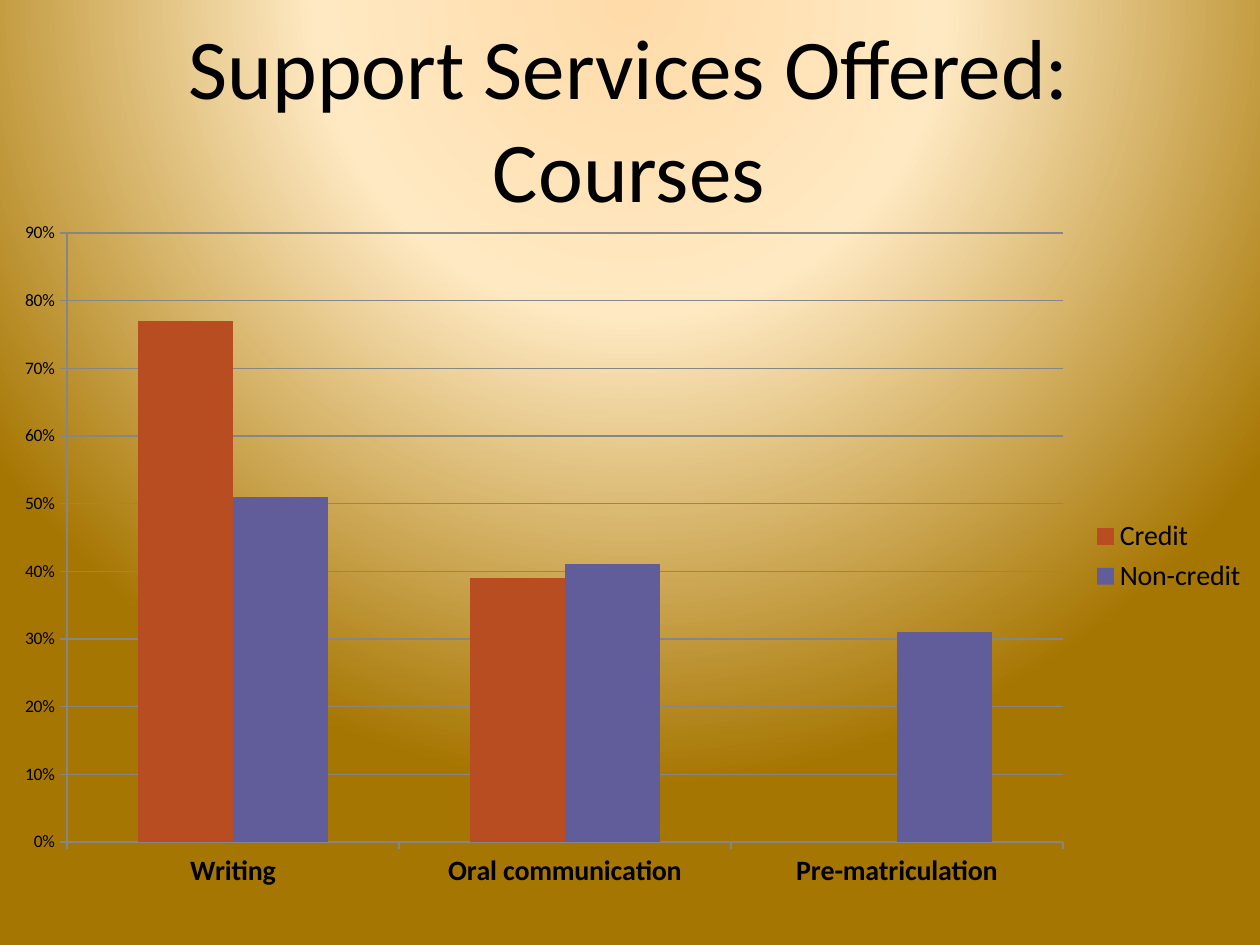
from dataclasses import dataclass
from typing import Optional

from lxml.etree import SubElement
from pptx import Presentation
from pptx.chart.chart import Chart
from pptx.chart.data import CategoryChartData
from pptx.dml.color import RGBColor
from pptx.enum.chart import XL_CHART_TYPE, XL_LEGEND_POSITION, XL_TICK_MARK
from pptx.enum.text import MSO_ANCHOR, MSO_AUTO_SIZE, PP_ALIGN
from pptx.oxml import parse_xml
from pptx.oxml.ns import nsdecls, qn
from pptx.slide import Slide
from pptx.text.text import Font, TextFrame
from pptx.util import Emu, Pt

EMU_PER_PX = 914400 / 126


@dataclass(frozen=True)
class Theme:
    font: str = "Calibri"
    ink: str = "000000"
    grid: str = "868686"
    glow: tuple = ((0, "FFDBA9"), (40, "FFE9C2"), (100, "A67602"))
    title_size: float = 48.6
    label_size: int = 16
    scale_size: int = 10


@dataclass(frozen=True)
class Box:
    left: int
    top: int
    width: int
    height: int

    def emu(self) -> tuple:
        return tuple(px(side) for side in (self.left, self.top, self.width, self.height))


@dataclass(frozen=True)
class CourseType:
    name: str
    shares: tuple[Optional[float], ...]
    color: str


THEME = Theme()
TITLE_BOX = Box(78, 38, 1102, 158)
CHART_BOX = Box(0, 210, 1260, 693)
PLOT_BOX = Box(67, 233, 996, 609)
COURSES = ("Writing", "Oral communication", "Pre-matriculation")
COURSE_TYPES = (
    CourseType("Credit", (0.77, 0.39, None), "B74D21"),
    CourseType("Non-credit", (0.51, 0.41, 0.31), "615D9A"),
)


def px(length: int) -> Emu:
    return Emu(round(length * EMU_PER_PX))


def format_font(font: Font, size: float, bold: bool = False) -> None:
    font.name = THEME.font
    font.size = Pt(size)
    font.bold = bold
    font.color.rgb = RGBColor.from_string(THEME.ink)


def write_text(frame: TextFrame, text: str, *, size: float, bold: bool = False,
               align: PP_ALIGN = PP_ALIGN.CENTER,
               anchor: MSO_ANCHOR = MSO_ANCHOR.MIDDLE) -> None:
    frame.word_wrap = True
    frame.auto_size = MSO_AUTO_SIZE.NONE
    frame.vertical_anchor = anchor
    paragraph = frame.paragraphs[0]
    paragraph.alignment = align
    run = paragraph.add_run()
    run.text = text
    format_font(run.font, size, bold)


def paint_background(slide: Slide) -> None:
    """Radial glow centred above the top edge."""
    slide.background.fill.gradient()
    gradient = slide.element.find(".//" + qn("a:gradFill"))
    stops = "".join(
        f'<a:gs pos="{percent * 1000}"><a:srgbClr val="{color}"/></a:gs>'
        for percent, color in THEME.glow)
    glow = parse_xml(
        f'<a:gradFill {nsdecls("a")} rotWithShape="1"><a:gsLst>{stops}</a:gsLst>'
        '<a:path path="circle"><a:fillToRect l="50000" t="-80000" r="50000" b="180000"/>'
        '</a:path></a:gradFill>')
    gradient.getparent().replace(gradient, glow)


def place_plot(chart: Chart) -> None:
    """Fix the inner plot area as fractions of the chart frame."""
    plot_area = chart.element.find(".//" + qn("c:plotArea"))
    layout = plot_area.find(qn("c:layout"))
    if layout is None:
        layout = SubElement(plot_area, qn("c:layout"))
        plot_area.insert(0, layout)
    manual = SubElement(layout, qn("c:manualLayout"))
    settings = {
        "layoutTarget": "inner", "xMode": "edge", "yMode": "edge",
        "x": (PLOT_BOX.left - CHART_BOX.left) / CHART_BOX.width,
        "y": (PLOT_BOX.top - CHART_BOX.top) / CHART_BOX.height,
        "w": PLOT_BOX.width / CHART_BOX.width,
        "h": PLOT_BOX.height / CHART_BOX.height,
    }
    for tag, value in settings.items():
        SubElement(manual, qn(f"c:{tag}")).set("val", str(value))


def add_course_chart(slide: Slide) -> None:
    shares = CategoryChartData(number_format="0%")
    shares.categories = COURSES
    for course_type in COURSE_TYPES:
        shares.add_series(course_type.name, course_type.shares)
    chart = slide.shapes.add_chart(
        XL_CHART_TYPE.COLUMN_CLUSTERED, *CHART_BOX.emu(), shares).chart
    format_font(chart.font, THEME.scale_size)
    chart.has_title = False
    place_plot(chart)

    # Columns
    columns = chart.plots[0]
    columns.gap_width = 150
    columns.overlap = 0
    columns.vary_by_categories = False
    for series, course_type in zip(columns.series, COURSE_TYPES):
        series.invert_if_negative = False
        series.format.fill.solid()
        series.format.fill.fore_color.rgb = RGBColor.from_string(course_type.color)

    # Axes and gridlines
    course_axis, share_axis = chart.category_axis, chart.value_axis
    share_axis.minimum_scale, share_axis.maximum_scale = 0, 0.9
    share_axis.major_unit = 0.1
    share_axis.has_major_gridlines = True
    share_axis.tick_labels.number_format = "0%"
    share_axis.tick_labels.number_format_is_linked = False
    for axis in (course_axis, share_axis):
        axis.major_tick_mark = XL_TICK_MARK.OUTSIDE
        axis.minor_tick_mark = XL_TICK_MARK.NONE
    for rule in (course_axis, share_axis, share_axis.major_gridlines):
        rule.format.line.width = Pt(0.75)
        rule.format.line.color.rgb = RGBColor.from_string(THEME.grid)
    format_font(course_axis.tick_labels.font, THEME.label_size, bold=True)
    format_font(share_axis.tick_labels.font, THEME.scale_size)

    # Legend
    chart.has_legend = True
    chart.legend.position = XL_LEGEND_POSITION.RIGHT
    chart.legend.include_in_layout = False
    format_font(chart.legend.font, THEME.label_size)


def main() -> None:
    deck = Presentation()
    deck.slide_width, deck.slide_height = px(1260), px(945)
    slide = deck.slides.add_slide(deck.slide_layouts[5])
    paint_background(slide)

    # Title
    title = slide.shapes.title
    title.left, title.top, title.width, title.height = TITLE_BOX.emu()
    write_text(title.text_frame, "Support Services Offered: Courses",
               size=THEME.title_size)

    add_course_chart(slide)
    deck.save("out.pptx")


if __name__ == "__main__":
    main()
